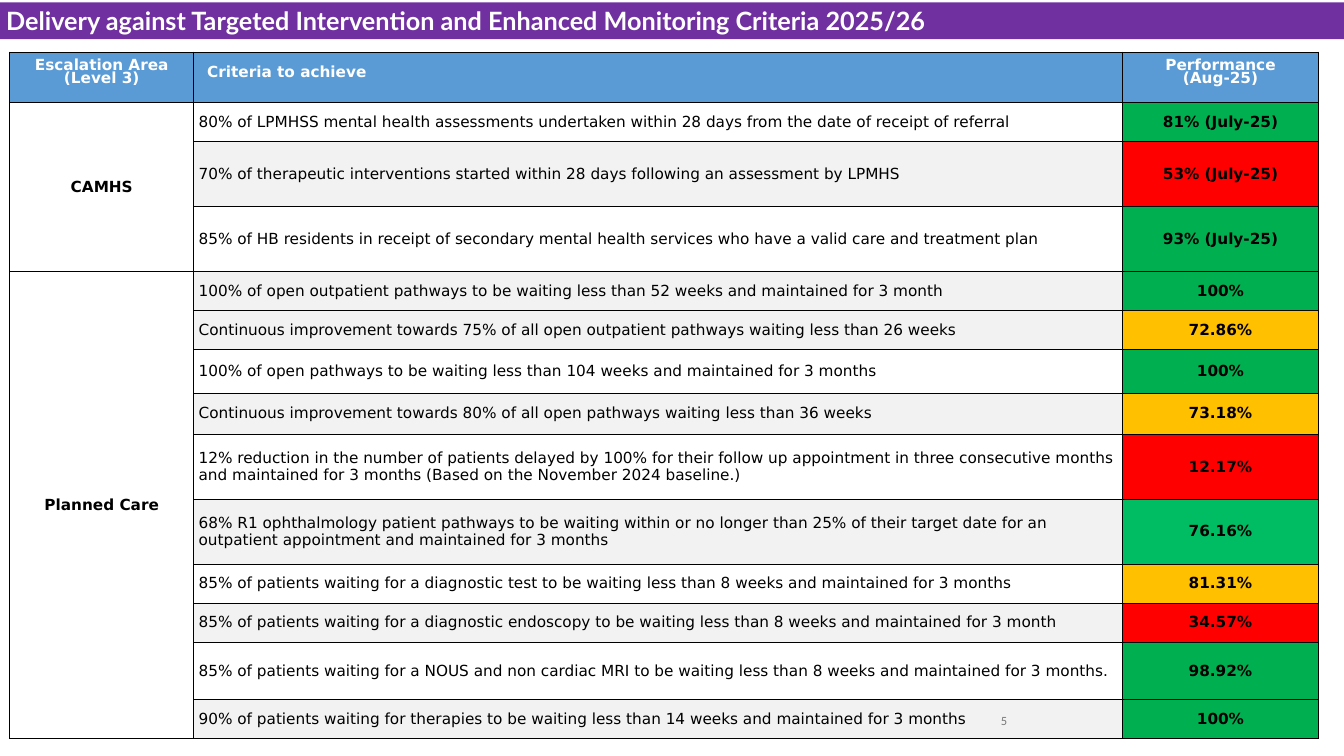
"""Build the slide on delivery against intervention and monitoring criteria."""
from lxml import etree
from pptx import Presentation
from pptx import util as u
from pptx.dml.color import RGBColor
from pptx.enum import text
from pptx.oxml import ns

PX = 9144
THEME = {
    "bar": "7030A0", "head": "5B9BD5", "white": "FFFFFF", "band": "F2F2F2",
    "black": "000000", "grey": "797979", "good": "00B050", "mint": "00BC62",
    "near": "FFC000", "miss": "FF0000",
    "body": "DejaVu Sans", "title": "Lato", "page": "Calibri",
    "big": 29.7, "mid": 18, "small": 14.8,
}
LEFT, MID, RIGHT, JUST = (text.PP_ALIGN.LEFT, text.PP_ALIGN.CENTER,
                          text.PP_ALIGN.RIGHT, text.PP_ALIGN.JUSTIFY)
ANCHOR = text.MSO_ANCHOR.MIDDLE


def paint(item, tone):
    item.fill.solid()
    item.fill.fore_color.rgb = RGBColor.from_string(THEME[tone])


def write(frame, words, align, tone, face="body", size="mid", bold=True, **form):
    frame.text = words
    for para in frame.paragraphs:
        for key, value in {"alignment": align, **form}.items():
            setattr(para, key, value)
        font = para.runs[0].font
        look = {"name": THEME[face], "size": u.Pt(THEME[size]), "bold": bold}
        for key, value in look.items():
            setattr(font, key, value)
        font.color.rgb = RGBColor.from_string(THEME[tone])


deck = Presentation()
deck.slide_width, deck.slide_height = 2199 * PX, 1237 * PX
slide = deck.slides.add_slide(deck.slide_layouts[5])

title = slide.shapes.title
place = {"left": 0, "top": 4, "width": 2199, "height": 60}
for key, value in place.items():
    setattr(title, key, value * PX)
paint(title, "bar")
frame = title.text_frame
bounds = {"margin_left": 10 * PX, "margin_right": 10 * PX, "margin_top": 5 * PX,
          "margin_bottom": 5 * PX, "vertical_anchor": ANCHOR, "word_wrap": True,
          "auto_size": text.MSO_AUTO_SIZE.NONE}
for key, value in bounds.items():
    setattr(frame, key, value)
write(frame, "Delivery against Targeted Intervention and Enhanced Monitoring Criteria 2025/26",
      JUST, "white", "title", "big")

heads = [("Escalation Area\n(Level 3)", MID), ("Criteria to achieve", LEFT),
         ("Performance\n(Aug-25)", MID)]
areas = [("CAMHS", 1, 3), ("Planned Care", 4, 13)]
goals = [
    (64, "80% of LPMHSS mental health assessments undertaken within 28 days from the date of receipt of referral", "81% (July-25)", "good"),
    (106, "70% of therapeutic interventions started within 28 days following an assessment by LPMHS", "53% (July-25)", "miss"),
    (106, "85% of HB residents in receipt of secondary mental health services who have a valid care and treatment plan", "93% (July-25)", "good"),
    (64, "100% of open outpatient pathways to be waiting less than 52 weeks and maintained for 3 month", "100%", "good"),
    (64, "Continuous improvement towards 75% of all open outpatient pathways waiting less than 26 weeks", "72.86%", "near"),
    (71, "100% of open pathways to be waiting less than 104 weeks and maintained for 3 months", "100%", "good"),
    (68, "Continuous improvement towards 80% of all open pathways waiting less than 36 weeks", "73.18%", "near"),
    (106, "12% reduction in the number of patients delayed by 100% for their follow up appointment in three consecutive months and maintained for 3 months (Based on the November 2024 baseline.)", "12.17%", "miss"),
    (106, "68% R1 ophthalmology patient pathways to be waiting within or no longer than 25% of their target date for an outpatient appointment and maintained for 3 months", "76.16%", "mint"),
    (64, "85% of patients waiting for a diagnostic test to be waiting less than 8 weeks and maintained for 3 months", "81.31%", "near"),
    (64, "85% of patients waiting for a diagnostic endoscopy to be waiting less than 8 weeks and maintained for 3 month", "34.57%", "miss"),
    (94, "85% of patients waiting for a NOUS and non cardiac MRI to be waiting less than 8 weeks and maintained for 3 months.", "98.92%", "good"),
    (64, "90% of patients waiting for therapies to be waiting less than 14 weeks and maintained for 3 months", "100%", "good"),
]
widths = [301, 1520, 320]
heights = [83] + [goal[0] for goal in goals]
table = slide.shapes.add_table(len(heights), len(widths), 16 * PX, 85 * PX,
                               sum(widths) * PX, sum(heights) * PX).table
table.first_row = table.horz_banding = False
for col, width in zip(table.columns, widths):
    col.width = width * PX
for row, height in zip(table.rows, heights):
    row.height = height * PX

for row, line in enumerate(table.rows):
    side, edge = (22, 11) if row == 0 else (8, 8)
    for cell in line.cells:
        inset = {"margin_left": side * PX, "margin_right": side * PX,
                 "margin_top": edge * PX, "margin_bottom": edge * PX,
                 "vertical_anchor": ANCHOR}
        for key, value in inset.items():
            setattr(cell, key, value)
        props = cell._tc.get_or_add_tcPr()
        for tag in ("a:lnL", "a:lnR", "a:lnT", "a:lnB"):
            rule = etree.SubElement(props, ns.qn(tag), w=str(u.Pt(1)))
            solid = etree.SubElement(rule, ns.qn("a:solidFill"))
            etree.SubElement(solid, ns.qn("a:srgbClr"), val=THEME["black"])
        paint(cell, "head" if row == 0 else "white")

for col, (words, align) in enumerate(heads):
    cell = table.cell(0, col)
    write(cell.text_frame, words, align, "white", line_spacing=u.Pt(8))
    if "\n" in words:
        cell.text_frame.paragraphs[0].space_after = u.Pt(8)

for name, first, last in areas:
    cell = table.cell(first, 0)
    cell.merge(table.cell(last, 0))
    write(cell.text_frame, name, MID, "black")

for row, (height, words, score, state) in enumerate(goals, 1):
    goal, result = table.cell(row, 1), table.cell(row, 2)
    write(goal.text_frame, words, LEFT, "black", bold=False)
    write(result.text_frame, score, MID, "black")
    paint(goal, "white" if (row + (row > 4)) % 2 else "band")
    paint(result, state)

page = slide.shapes.add_textbox(1262 * PX, 1146 * PX, 402 * PX, 66 * PX).text_frame
bounds = {"margin_left": 16 * PX, "margin_right": 16 * PX, "margin_top": 8 * PX,
          "margin_bottom": 8 * PX, "vertical_anchor": ANCHOR, "word_wrap": True}
for key, value in bounds.items():
    setattr(page, key, value)
write(page, "5", RIGHT, "grey", "page", "small", False)

deck.save("out.pptx")
